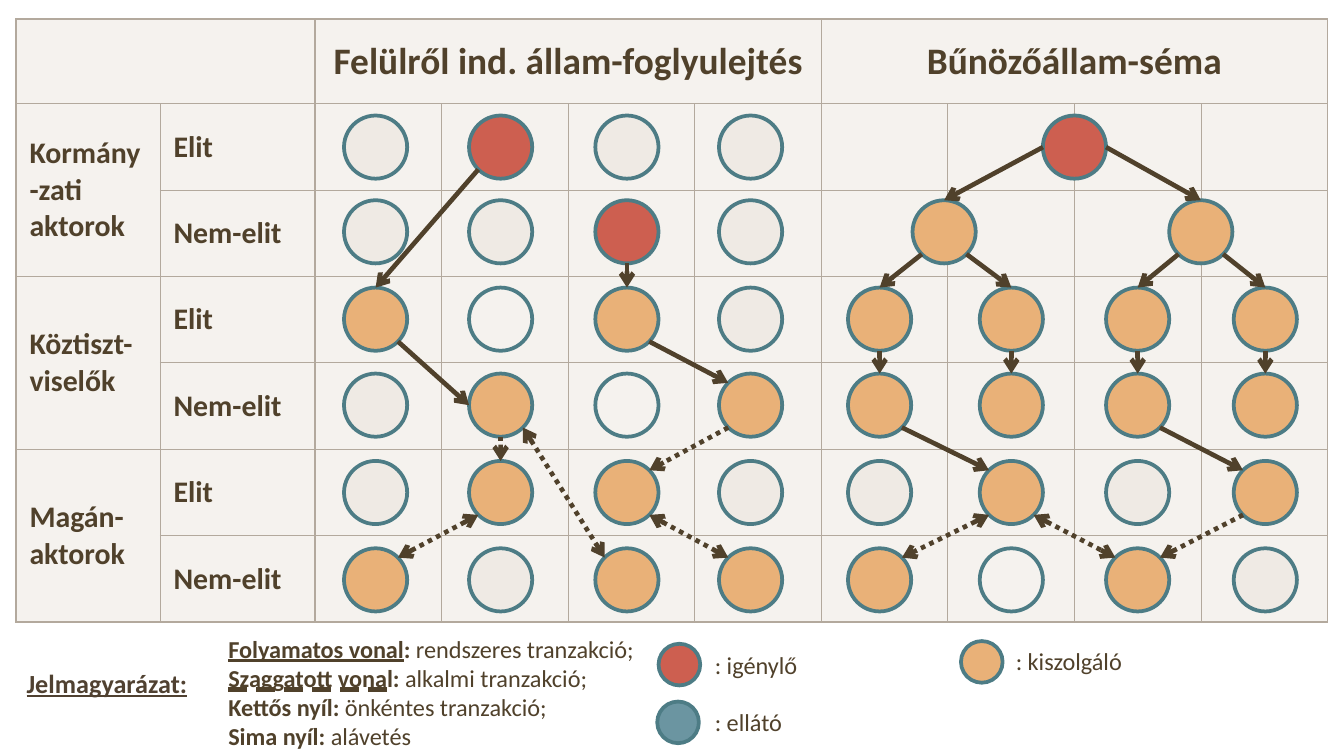
from lxml import etree
from pptx import Presentation
from pptx.dml.color import RGBColor
from pptx.enum.dml import MSO_LINE
from pptx.enum.shapes import MSO_CONNECTOR, MSO_SHAPE
from pptx.enum.text import MSO_ANCHOR, MSO_AUTO_SIZE, MSO_UNDERLINE, PP_ALIGN
from pptx.oxml.ns import qn
from pptx.util import Inches, Pt

ELLIPSE = MSO_SHAPE.OVAL
STRAIGHT = MSO_CONNECTOR.STRAIGHT
DOTTED = MSO_LINE.ROUND_DOT
MIDDLE = MSO_ANCHOR.MIDDLE
GROW = MSO_AUTO_SIZE.SHAPE_TO_FIT_TEXT
LEFT, CENTER = PP_ALIGN.LEFT, PP_ALIGN.CENTER
DASHED_UNDERLINE = MSO_UNDERLINE.DASH_HEAVY_LINE

BROWN, SAND, PALE = "50412B", "B3A99D", "EFEAE4"
TEAL, RED, ORANGE, BLUE = "4D7C85", "CD5F50", "E9B178", "6B95A1"

SLIDE_WIDTH = 10
SLIDE_HEIGHT = SLIDE_WIDTH * 9 / 16
DIAMETER = 0.47
DIAGONAL = 0.5 ** 0.5
SITES = {
    "N": (0, -1), "S": (0, 1), "W": (-1, 0), "E": (1, 0),
    "NW": (-DIAGONAL, -DIAGONAL), "NE": (DIAGONAL, -DIAGONAL),
    "SW": (-DIAGONAL, DIAGONAL), "SE": (DIAGONAL, DIAGONAL),
}
COLUMN_LEFTS = {
    "A": 2.56, "B": 3.49, "C": 4.43, "D": 5.35,
    "E": 6.31, "F": 7.29, "G": 8.23, "H": 9.18,
    "T": 7.76, "L": 6.79, "R": 8.7,
}
ROW_TOPS = {"1": 0.86, "2": 1.49, "3": 2.14, "4": 2.78, "5": 3.43, "6": 4.08}
ACTORS = {
    RED: "B1 T1 C2",
    ORANGE: "L2 R2 A3 C3 E3 F3 G3 H3 B4 D4 E4 F4 G4 H4 "
            "B5 C5 F5 H5 A6 C6 D6 E6 G6",
    PALE: "A1 C1 D1 A2 B2 D2 D3 A4 A5 D5 E5 G5 B6 H6",
    None: "B3 C4 F6",
}
ORDERS = (
    "T1:W-L2:N T1:E-R2:N L2:SW-E3:N L2:SE-F3:N R2:SW-G3:N R2:SE-H3:N "
    "E3:S-E4:N F3:S-F4:N G3:S-G4:N H3:S-H4:N E4:SE-F5:NW G4:SE-H5:NW "
    "B1:SW-A3:N A3:SE-B4:W C2:S-C3:N C3:SE-D4:NW"
)
OCCASIONAL = "H5:SW-G6:NE D4:SW-C5:NE B4:S-B5:N"
VOLUNTARY = "F5:SW-E6:NE F5:SE-G6:NW C5:SE-D6:NW B4:SE-C6:NW B5:SW-A6:NE"

COLUMN_WIDTHS = [1.07, 1.15] + [0.94] * 8
ROW_HEIGHTS = [0.63] + [0.64] * 6
HEAVY_COLUMNS, HEAVY_ROWS = {0, 2, 6, 10}, {0, 7}
MERGES = [(0, 0, 0, 1), (0, 2, 0, 5), (0, 6, 0, 9),
          (1, 0, 2, 0), (3, 0, 4, 0), (5, 0, 6, 0)]
HEADINGS = {(0, 2): "Felülről ind. állam-foglyulejtés", (0, 6): "Bűnözőállam-séma"}
LABELS = {(1, 0): "Kormány-zati aktorok", (3, 0): "Köztiszt-viselők",
          (5, 0): "Magán-aktorok"}
LABELS.update({(row, 1): "Elit" if row % 2 else "Nem-elit" for row in range(1, 7)})


def color(hex_string):
    return RGBColor.from_string(hex_string)


def apply(target, values):
    for name, value in values.items():
        setattr(target, name, value)


def shares(parts, total):
    return [Inches(part * total / sum(parts)) for part in parts]


def site_point(end):
    node, site = end.split(":")
    corner = COLUMN_LEFTS[node[0]], ROW_TOPS[node[1]]
    return [start + DIAMETER / 2 * (1 + offset)
            for start, offset in zip(corner, SITES[site])]


class Diagram:
    def __init__(self, slide, font="Calibri"):
        self.slide = slide
        self.font = font

    def run(self, paragraph, text, size, ink=BROWN, **style):
        run = paragraph.add_run()
        run.text = text
        apply(run.font, {"name": self.font, "size": Pt(size), **style})
        run.font.color.rgb = color(ink)

    def circle(self, left, top, diameter, fill):
        circle = self.slide.shapes.add_shape(
            ELLIPSE, Inches(left), Inches(top), Inches(diameter), Inches(diameter))
        circle.shadow.inherit = False
        if fill:
            circle.fill.solid()
            circle.fill.fore_color.rgb = color(fill)
        else:
            circle.fill.background()
        circle.line.color.rgb = color(TEAL)
        circle.line.width = Pt(2)

    def arrow(self, start, end, dotted=False, double=False):
        points = [Inches(value) for value in site_point(start) + site_point(end)]
        arrow = self.slide.shapes.add_connector(STRAIGHT, *points)
        arrow.line.color.rgb = color(BROWN)
        arrow.line.width = Pt(2.5)
        if dotted:
            arrow.line.dash_style = DOTTED
        line = arrow.line._get_or_add_ln()
        for tag in ["a:headEnd"] * double + ["a:tailEnd"]:
            etree.SubElement(line, qn(tag), type="arrow")
        etree.SubElement(arrow._element.spPr, qn("a:effectLst"))

    def text(self, left, top, width, height, paragraphs, size, wrap=True, ink=BROWN):
        box = self.slide.shapes.add_textbox(
            Inches(left), Inches(top), Inches(width), Inches(height))
        frame = box.text_frame
        apply(frame, {"word_wrap": wrap, "vertical_anchor": MIDDLE, "auto_size": GROW})
        for index, runs in enumerate(paragraphs):
            paragraph = frame.add_paragraph() if index else frame.paragraphs[0]
            for text, style in runs:
                if text == "\n":
                    paragraph.add_line_break()
                else:
                    self.run(paragraph, text, size, ink, **style)

    def cell_text(self, cell, text, size, alignment):
        paragraph = cell.text_frame.paragraphs[0]
        paragraph.alignment = alignment
        self.run(paragraph, text, size, bold=True)

    def cell_style(self, cell, row, column):
        cell.vertical_anchor = MIDDLE
        cell.fill.solid()
        cell.fill.fore_color.rgb = color(PALE)
        properties = cell._tc.get_or_add_tcPr()
        shade = properties.find(".//" + qn("a:srgbClr"))
        etree.SubElement(shade, qn("a:alpha"), val="60000")
        right = column + (cell.span_width if cell.is_merge_origin else 1)
        bottom = row + (cell.span_height if cell.is_merge_origin else 1)
        edges = {"a:lnL": column in HEAVY_COLUMNS, "a:lnR": right in HEAVY_COLUMNS,
                 "a:lnT": row in HEAVY_ROWS, "a:lnB": bottom in HEAVY_ROWS}
        for position, (tag, heavy) in enumerate(edges.items()):
            border = etree.Element(qn(tag), w=str(Pt(1 if heavy else 0.5)))
            fill = etree.SubElement(border, qn("a:solidFill"))
            etree.SubElement(fill, qn("a:srgbClr"), val=SAND)
            properties.insert(position, border)

    def grid(self, left, top, width, height):
        table = self.slide.shapes.add_table(
            len(ROW_HEIGHTS), len(COLUMN_WIDTHS), Inches(left), Inches(top),
            Inches(width), Inches(height)).table
        apply(table, {"first_row": False, "horz_banding": False})
        for column, share in zip(table.columns, shares(COLUMN_WIDTHS, width)):
            column.width = share
        for row, share in zip(table.rows, shares(ROW_HEIGHTS, height)):
            row.height = share
        for first_row, first_column, last_row, last_column in MERGES:
            table.cell(first_row, first_column).merge(table.cell(last_row, last_column))
        for row in range(len(ROW_HEIGHTS)):
            for column in range(len(COLUMN_WIDTHS)):
                self.cell_style(table.cell(row, column), row, column)
        for texts, size, alignment in ((HEADINGS, 20, CENTER), (LABELS, 16, LEFT)):
            for place, text in texts.items():
                self.cell_text(table.cell(*place), text, size, alignment)


def main():
    presentation = Presentation()
    apply(presentation, {"slide_width": Inches(SLIDE_WIDTH),
                         "slide_height": Inches(SLIDE_HEIGHT)})
    diagram = Diagram(presentation.slides.add_slide(presentation.slide_layouts[6]))
    diagram.grid(0.12, 0.14, 9.76, 4.49)
    for fill, nodes in ACTORS.items():
        for node in nodes.split():
            diagram.circle(COLUMN_LEFTS[node[0]], ROW_TOPS[node[1]], DIAMETER, fill)
    for links, dotted, double in ((ORDERS, False, False), (OCCASIONAL, True, False),
                                  (VOLUNTARY, True, True)):
        for link in links.split():
            diagram.arrow(*link.split("-"), dotted=dotted, double=double)

    strong, plain = {"bold": True}, {"bold": False}
    diagram.text(1.6, 4.66, 3.31, 0.98, [
        [("Folyamatos vonal", {"bold": True, "underline": True}), (": ", strong),
         ("rendszeres tranzakció;", plain)],
        [("Szaggatott vonal", {"bold": True, "underline": DASHED_UNDERLINE}),
         (": ", strong), ("alkalmi tranzakció;", plain), ("\n", plain),
         ("Kettős nyíl: ", strong), ("önkéntes tranzakció;", plain)],
        [("Sima nyíl: ", strong), ("alávetés", plain)],
    ], 13)
    for left, top, fill in ((4.9, 4.79, RED), (7.15, 4.77, ORANGE), (4.89, 5.22, BLUE)):
        diagram.circle(left, top, 0.31, fill)
    for left, top, width, role in ((5.22, 4.79, 0.82, ": igénylő"),
                                   (7.46, 4.76, 1, ": kiszolgáló"),
                                   (5.22, 5.21, 0.71, ": ellátó")):
        diagram.text(left, top, width, 0.32, [[(role, plain)]], 13, wrap=False)
    diagram.text(0.1, 4.91, 1.5, 0.34,
                 [[("Jelmagyarázat:", {"bold": True, "underline": True})]], 14, ink="504131")
    presentation.save("out.pptx")


if __name__ == "__main__":
    main()
